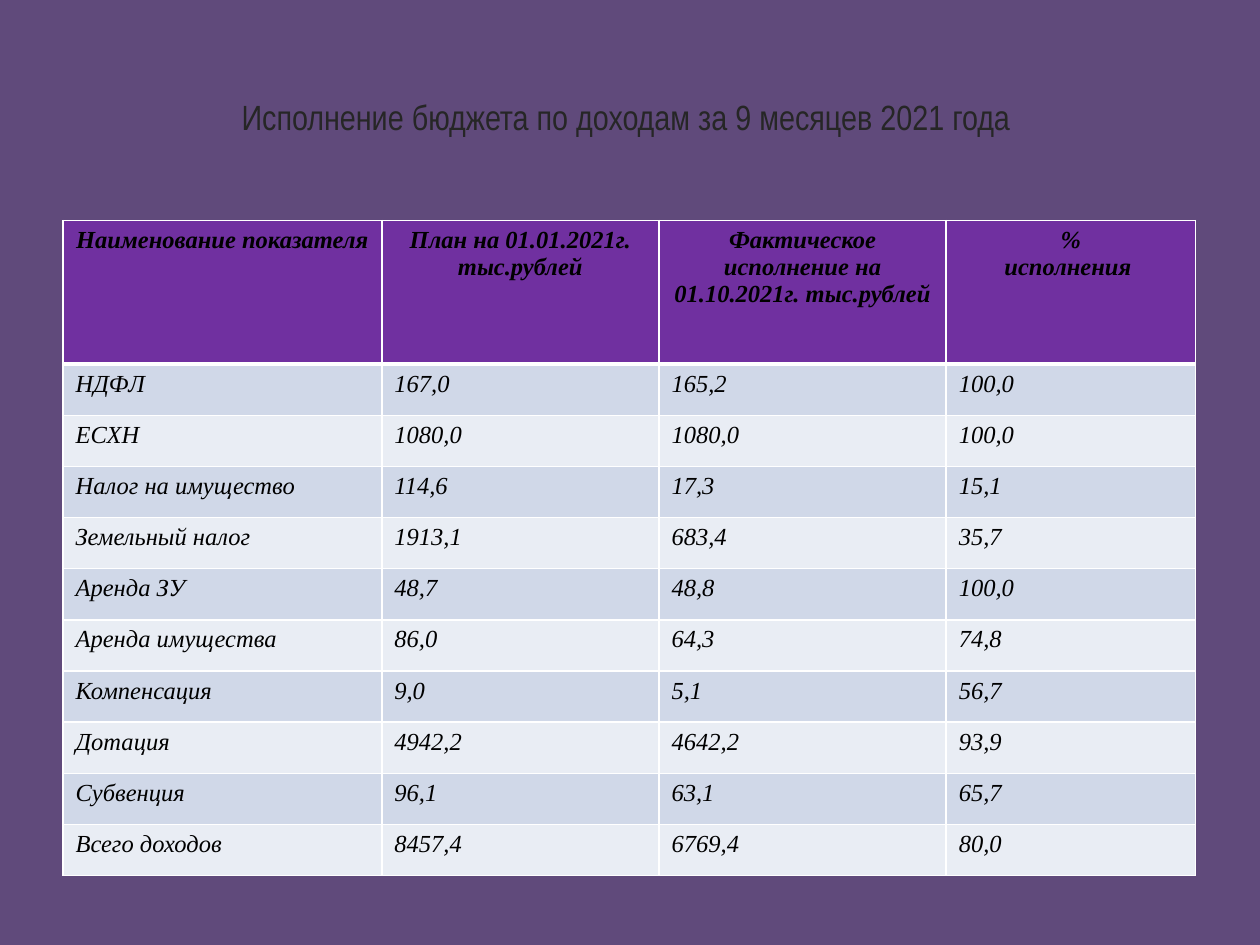
from lxml import etree
from pptx import Presentation
from pptx.dml.color import RGBColor
from pptx.enum.text import MSO_ANCHOR, PP_ALIGN
from pptx.oxml.ns import qn
from pptx.util import Inches, Pt

CENTER, LEFT = PP_ALIGN.CENTER, PP_ALIGN.LEFT
MIDDLE = MSO_ANCHOR.MIDDLE

# Content
TITLE = "Исполнение бюджета по доходам за 9 месяцев 2021 года "
HEADERS = [
    "Наименование показателя",
    "План на 01.01.2021г. тыс.рублей",
    "Фактическое исполнение на 01.10.2021г. тыс.рублей",
    "%\nисполнения ",
]
INCOME = [
    ("НДФЛ", "167,0", "165,2", "100,0"),
    ("ЕСХН", "1080,0", "1080,0", "100,0"),
    ("Налог на имущество", "114,6", "17,3", "15,1"),
    ("Земельный налог", "1913,1", "683,4", "35,7"),
    ("Аренда ЗУ", "48,7", "48,8", "100,0"),
    ("Аренда имущества", "86,0", "64,3", "74,8"),
    ("Компенсация", "9,0", "5,1", "56,7"),
    ("Дотация", "4942,2", "4642,2", "93,9"),
    ("Субвенция", "96,1", "63,1", "65,7"),
    ("Всего доходов", "8457,4", "6769,4", "80,0"),
]

# Style and layout
COLORS = {
    "background": "604A7B", "title": "262626", "text": "000000",
    "header": "7030A0", "odd": "D0D8E8", "even": "E9EDF4", "border": "FFFFFF",
}
TITLE_FONT, TABLE_FONT = "Arial Narrow", "Times New Roman"
COLUMN_WIDTHS = [2.53, 2.2, 2.28, 1.98]
TABLE_HEIGHT, HEADER_HEIGHT = 5.2, 1.14
ROW_HEIGHT = (TABLE_HEIGHT - HEADER_HEIGHT) / len(INCOME)


def color(name):
    return RGBColor.from_string(COLORS[name])


def add_text(para, text, font, size, color_name, bold=False, italic=False):
    span = para.add_run()
    span.text = text
    span.font.name = font
    span.font.size = Pt(size)
    span.font.bold = bold
    span.font.italic = italic
    span.font.color.rgb = color(color_name)


def set_borders(cell, widths):
    properties = cell._tc.get_or_add_tcPr()
    for index, (side, width) in enumerate(widths.items()):
        line = etree.Element(qn(f"a:ln{side}"), w=str(Pt(width)))
        fill = etree.SubElement(line, qn("a:solidFill"))
        etree.SubElement(fill, qn("a:srgbClr"), val=COLORS["border"])
        properties.insert(index, line)


def fill_cell(cell, text, row):
    is_header = row == 0
    fill_name = "header" if is_header else ("odd" if row % 2 else "even")
    cell.fill.solid()
    cell.fill.fore_color.rgb = color(fill_name)
    set_borders(cell, {"L": 1, "R": 1, "T": 3 if row == 1 else 1,
                       "B": 3 if is_header else 1})
    for index, line in enumerate(text.split("\n")):
        frame = cell.text_frame
        para = frame.add_paragraph() if index else frame.paragraphs[0]
        para.alignment = CENTER if is_header else LEFT
        add_text(para, line, TABLE_FONT, 14, "text", is_header, True)


# Slide
deck = Presentation()
deck.slide_width, deck.slide_height = Inches(10), Inches(7.5)
page = deck.slides.add_slide(deck.slide_layouts[6])
page.background.fill.solid()
page.background.fill.fore_color.rgb = color("background")

# Title
box = page.shapes.add_textbox(Inches(0.5), Inches(0.3), Inches(9), Inches(1.25))
box.text_frame.word_wrap = True
box.text_frame.vertical_anchor = MIDDLE
title_para = box.text_frame.paragraphs[0]
title_para.alignment = CENTER
add_text(title_para, TITLE, TITLE_FONT, 20, "title")

# Income table
rows = [HEADERS] + INCOME
table = page.shapes.add_table(
    len(rows), len(HEADERS), Inches(0.5), Inches(1.75),
    Inches(sum(COLUMN_WIDTHS)), Inches(TABLE_HEIGHT)).table
for column, width in zip(table.columns, COLUMN_WIDTHS):
    column.width = Inches(width)
for row, texts in enumerate(rows):
    table.rows[row].height = Inches(ROW_HEIGHT if row else HEADER_HEIGHT)
    for column, text in enumerate(texts):
        fill_cell(table.cell(row, column), text, row)

deck.save("out.pptx")
